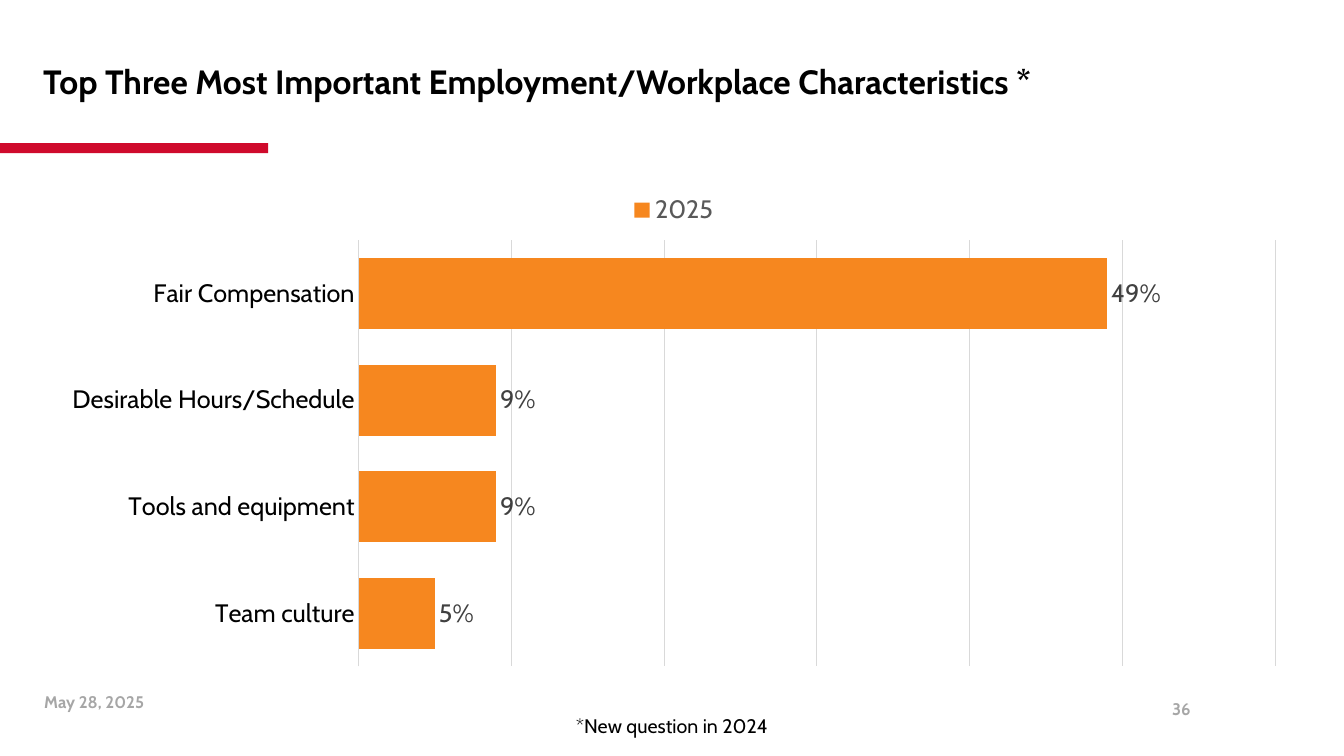
from dataclasses import dataclass

from pptx import Presentation
from pptx.chart.data import CategoryChartData
from pptx.dml.color import RGBColor
from pptx.enum.chart import XL_CHART_TYPE, XL_LABEL_POSITION, XL_LEGEND_POSITION, XL_TICK_MARK
from pptx.enum.shapes import MSO_SHAPE
from pptx.enum.text import MSO_ANCHOR, PP_ALIGN
from pptx.util import Pt

BAR = XL_CHART_TYPE.BAR_CLUSTERED
OUTSIDE = XL_LABEL_POSITION.OUTSIDE_END
ABOVE = XL_LEGEND_POSITION.TOP
NO_TICK = XL_TICK_MARK.NONE
RECT = MSO_SHAPE.RECTANGLE
TOP, MIDDLE = MSO_ANCHOR.TOP, MSO_ANCHOR.MIDDLE
LEFT, CENTER, RIGHT = PP_ALIGN.LEFT, PP_ALIGN.CENTER, PP_ALIGN.RIGHT

FACE = "Cabin"
BLACK, GREY, RULE = "000000", "A6A6A6", "D9D9D9"
RED, ORANGE = "CF0A2C", "F6871F"

SHARES = {
    "Team culture": 0.05,
    "Tools and equipment": 0.09,
    "Desirable Hours/Schedule": 0.09,
    "Fair Compensation": 0.49,
}


@dataclass
class Label:
    text: str
    left: float
    top: float
    width: float
    height: float
    size: float
    color: str = BLACK
    bold: bool = False
    align: PP_ALIGN = LEFT
    anchor: MSO_ANCHOR = TOP
    foot: float = 3.6  # bottom inset


LABELS = [
    Label("Top Three Most Important Employment/Workplace Characteristics *",
          23.8, 20.2, 869, 104.4, 24, bold=True, anchor=MIDDLE, foot=32),
    Label("*New question in 2024", 0, 506.2, 960, 24.5, 14, align=CENTER),
    Label("36", 641.5, 491.8, 216, 28.8, 12, GREY, True, RIGHT, MIDDLE),
    Label("May 28, 2025", 24.5, 490.3, 221, 28.8, 12, GREY, True),
]


def tint(code: str) -> RGBColor:
    return RGBColor.from_string(code)


def style(font, size: float, color: str, bold: bool = False) -> None:
    font.name = FACE
    font.size = Pt(size)
    font.bold = bold
    font.color.rgb = tint(color)


def rule(line) -> None:
    """Give an axis or gridline the thin grey stroke."""
    line.color.rgb = tint(RULE)
    line.width = Pt(0.75)


def add_label(slide, label: Label) -> None:
    box = slide.shapes.add_textbox(
        Pt(label.left), Pt(label.top), Pt(label.width), Pt(label.height))
    frame = box.text_frame
    frame.word_wrap = True
    frame.vertical_anchor = label.anchor
    frame.margin_bottom = Pt(label.foot)
    para = frame.paragraphs[0]
    para.alignment = label.align
    run = para.add_run()
    run.text = label.text
    style(run.font, label.size, label.color, label.bold)


def add_accent(slide) -> None:
    bar = slide.shapes.add_shape(RECT, Pt(0), Pt(102.2), Pt(191.5), Pt(7.2))
    bar.shadow.inherit = False
    bar.fill.solid()
    bar.fill.fore_color.rgb = tint(RED)
    bar.line.fill.background()


def add_bars(slide) -> None:
    data = CategoryChartData(number_format="0%")
    data.categories = list(SHARES)
    data.add_series("2025", list(SHARES.values()))
    chart = slide.shapes.add_chart(
        BAR, Pt(33.8), Pt(130.3), Pt(895), Pt(352.8), data).chart
    style(chart.font, 10, BLACK)
    chart.has_title = False
    chart.has_legend = True
    chart.legend.position = ABOVE
    chart.legend.include_in_layout = False
    style(chart.legend.font, 18, "595959")

    names = chart.category_axis
    names.major_tick_mark = names.minor_tick_mark = NO_TICK
    style(names.tick_labels.font, 18, BLACK)
    rule(names.format.line)

    scale = chart.value_axis
    scale.visible = False
    scale.minimum_scale, scale.maximum_scale, scale.major_unit = 0, 0.6, 0.1
    scale.has_major_gridlines = True
    rule(scale.major_gridlines.format.line)

    plot = chart.plots[0]
    plot.gap_width = 50
    plot.vary_by_categories = False
    series = plot.series[0]
    series.format.fill.solid()
    series.format.fill.fore_color.rgb = tint(ORANGE)
    marks = series.data_labels
    marks.show_value = True
    marks.number_format = "0%"
    marks.number_format_is_linked = False
    marks.position = OUTSIDE
    style(marks.font, 18, "404040")


def main() -> None:
    deck = Presentation()
    deck.slide_width, deck.slide_height = Pt(960), Pt(540)
    slide = deck.slides.add_slide(deck.slide_layouts[6])
    add_accent(slide)
    add_bars(slide)
    for label in LABELS:
        add_label(slide, label)
    deck.save("out.pptx")


if __name__ == "__main__":
    main()
